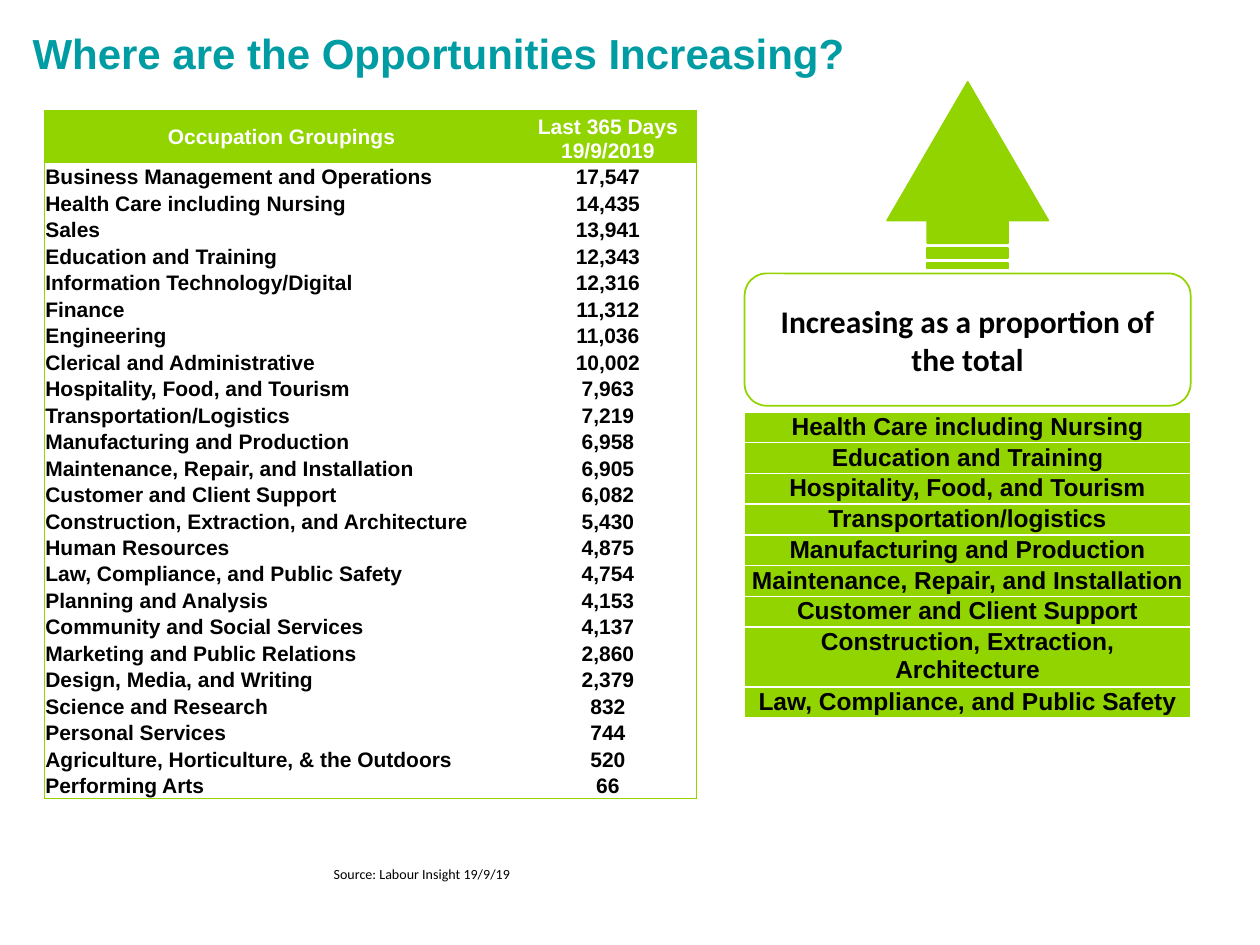
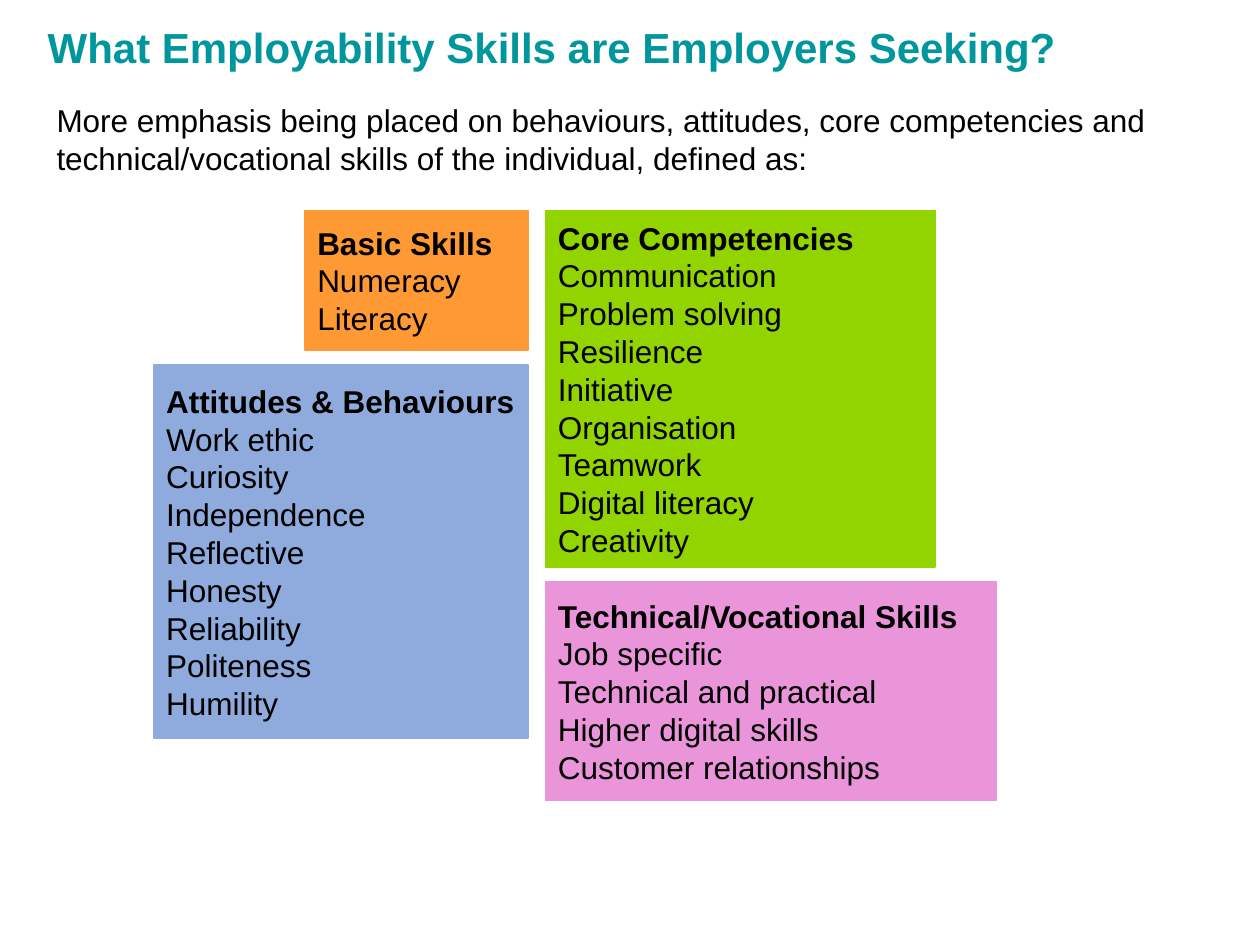
from dataclasses import dataclass

from lxml import etree
from pptx import Presentation
from pptx import util as u
from pptx.dml.color import RGBColor
from pptx.enum import shapes, text
from pptx.oxml.ns import qn

PX = 9144  # EMU per px, 100 px to the inch


@dataclass(frozen=True)
class Theme:
    heading: str = "Arial"
    note: str = "Calibri"
    black: str = "000000"
    white: str = "FFFFFF"
    green: str = "92D400"
    blue: str = "8FAADC"
    orange: str = "FF9933"
    pink: str = "EA95DA"
    opportunities_teal: str = "009CA3"
    skills_teal: str = "00969D"
    title_size: int = 24
    body_size: int = 18
    rising_size: int = 14
    table_size: int = 12
    source_size: int = 8
    leading: float = 1.2


THEME = Theme()


@dataclass(frozen=True)
class Box:
    left: int
    top: int
    width: int
    height: int

    def emu(self) -> tuple:
        return tuple(u.Emu(side * PX) for side in
                     (self.left, self.top, self.width, self.height))


@dataclass(frozen=True)
class SkillGroup:
    heading: str
    skills: tuple
    colour: str
    box: Box


OCCUPATIONS = (
    ("Business Management and Operations", "17,547"),
    ("Health Care including Nursing", "14,435"),
    ("Sales", "13,941"),
    ("Education and Training", "12,343"),
    ("Information Technology/Digital", "12,316"),
    ("Finance", "11,312"),
    ("Engineering", "11,036"),
    ("Clerical and Administrative", "10,002"),
    ("Hospitality, Food, and Tourism", "7,963"),
    ("Transportation/Logistics", "7,219"),
    ("Manufacturing and Production", "6,958"),
    ("Maintenance, Repair, and Installation", "6,905"),
    ("Customer and Client Support", "6,082"),
    ("Construction, Extraction, and Architecture", "5,430"),
    ("Human Resources", "4,875"),
    ("Law, Compliance, and Public Safety", "4,754"),
    ("Planning and Analysis", "4,153"),
    ("Community and Social Services", "4,137"),
    ("Marketing and Public Relations", "2,860"),
    ("Design, Media, and Writing", "2,379"),
    ("Science and Research", "832"),
    ("Personal Services", "744"),
    ("Agriculture, Horticulture, & the Outdoors", "520"),
    ("Performing Arts", "66"),
)

RISING = (
    "Health Care including Nursing",
    "Education and Training",
    "Hospitality, Food, and Tourism",
    "Transportation/logistics",
    "Manufacturing and Production",
    "Maintenance, Repair, and Installation",
    "Customer and Client Support",
    "Construction, Extraction, Architecture",
    "Law, Compliance, and Public Safety",
)
TWO_LINE_RISING = "Construction, Extraction, Architecture"

SKILL_GROUPS = (
    SkillGroup("Attitudes & Behaviours",
               ("Work ethic", "Curiosity", "Independence", "Reflective",
                "Honesty", "Reliability", "Politeness", "Humility"),
               THEME.blue, Box(122, 290, 297, 296)),
    SkillGroup("Core Competencies",
               ("Communication", "Problem solving", "Resilience", "Initiative",
                "Organisation", "Teamwork", "Digital literacy", "Creativity"),
               THEME.green, Box(433, 167, 309, 283)),
    SkillGroup("Basic Skills", ("Numeracy", "Literacy"),
               THEME.orange, Box(242, 167, 177, 111)),
    SkillGroup("Technical/Vocational Skills",
               ("Job specific", "Technical and practical",
                "Higher digital skills", "Customer relationships"),
               THEME.pink, Box(433, 462, 358, 173)),
)


def write(frame, *lines: str, size: int, font: str = THEME.heading,
          colour: str = THEME.black, bold: bool = False, bold_first: bool = False,
          centred: bool = False, leading: float | None = None) -> None:
    """Fill a text frame with one paragraph per line."""
    for index, line in enumerate(lines):
        paragraph = frame.add_paragraph() if index else frame.paragraphs[0]
        paragraph.alignment = text.PP_ALIGN.CENTER if centred else text.PP_ALIGN.LEFT
        if leading:
            paragraph.line_spacing = u.Pt(size * leading)
        run = paragraph.add_run()
        run.text = line
        run.font.name, run.font.size = font, u.Pt(size)
        run.font.bold = bold or (bold_first and index == 0)
        run.font.color.rgb = RGBColor.from_string(colour)


def add_label(slide, box: Box, line: str, **style) -> None:
    frame = slide.shapes.add_textbox(*box.emu()).text_frame
    frame.word_wrap = True
    frame.auto_size = text.MSO_AUTO_SIZE.SHAPE_TO_FIT_TEXT
    write(frame, line, **style)


def add_title(slide, box: Box, line: str, colour: str) -> None:
    add_label(slide, box, line, size=THEME.title_size, colour=colour,
              bold=True, leading=THEME.leading)


def add_block(slide, kind, box: Box, line: str, fill: str | None = None):
    block = slide.shapes.add_shape(kind, *box.emu())
    block.shadow.inherit = False
    if fill:
        block.fill.solid()
        block.fill.fore_color.rgb = RGBColor.from_string(fill)
    else:
        block.fill.background()
    block.line.color.rgb = RGBColor.from_string(line)
    block.line.width = u.Pt(1)
    block.text_frame.word_wrap = True
    block.text_frame.vertical_anchor = text.MSO_ANCHOR.MIDDLE
    return block


def set_borders(cell, sides: str, colour: str, points: float) -> None:
    """Draw the named sides (of L, R, T, B) and clear the others."""
    properties = cell._tc.get_or_add_tcPr()
    for index, side in enumerate("LRTB"):
        border = etree.Element(qn(f"a:ln{side}"), w=str(int(u.Pt(points))))
        if side in sides:
            fill = etree.SubElement(border, qn("a:solidFill"))
            etree.SubElement(fill, qn("a:srgbClr"), val=colour)
        else:
            etree.SubElement(border, qn("a:noFill"))
        properties.insert(index, border)


def add_grid(slide, box: Box, rows: int, widths: tuple, heights: list):
    table = slide.shapes.add_table(rows, len(widths), *box.emu()).table
    table.first_row = table.horz_banding = False
    for column, width in zip(table.columns, widths):
        column.width = u.Emu(width * PX)
    for row, height in zip(table.rows, heights):
        row.height = u.Emu(height)
    return table


def fill_cell(cell, words: str, anchor, fill: str | None, **style) -> None:
    cell.margin_left = cell.margin_right = cell.margin_top = u.Emu(PX)
    cell.margin_bottom = 0
    cell.vertical_anchor = anchor
    if fill:
        cell.fill.solid()
        cell.fill.fore_color.rgb = RGBColor.from_string(fill)
    else:
        cell.fill.background()
    write(cell.text_frame, words, bold=True, **style)


def add_occupations(slide) -> None:
    box, header = Box(35, 88, 518, 542), 41
    rows = (("Occupation Groupings", "Last 365 Days 19/9/2019"), *OCCUPATIONS)
    body = (box.height - header) * PX // len(OCCUPATIONS)
    table = add_grid(slide, box, len(rows), (377, 141),
                     [header * PX] + [body] * len(OCCUPATIONS))
    for r, row in enumerate(rows):
        for c, words in enumerate(row):
            cell, is_header = table.cell(r, c), r == 0
            middle = is_header and c == 0
            fill_cell(cell, words,
                      text.MSO_ANCHOR.MIDDLE if middle else text.MSO_ANCHOR.BOTTOM,
                      THEME.green if is_header else None,
                      size=THEME.table_size, centred=is_header or c == 1,
                      colour=THEME.white if is_header else THEME.black)
            sides = "LR"[c] + "T" * is_header + "B" * (r == len(rows) - 1)
            set_borders(cell, sides, THEME.green, 0.5)


def add_rising(slide) -> None:
    heights = [(47 if name == TWO_LINE_RISING else 24) * PX for name in RISING]
    table = add_grid(slide, Box(591, 327, 354, 239), len(RISING), (354,), heights)
    for r, name in enumerate(RISING):
        cell = table.cell(r, 0)
        fill_cell(cell, name, text.MSO_ANCHOR.TOP, THEME.green,
                  size=THEME.rising_size, centred=True)
        set_borders(cell, "LRTB", THEME.white, 1)


def build_opportunities(slide) -> None:
    add_title(slide, Box(16, 17, 948, 50), "Where are the Opportunities Increasing?",
              THEME.opportunities_teal)
    add_occupations(slide)
    caption = add_block(slide, shapes.MSO_SHAPE.ROUNDED_RECTANGLE,
                        Box(591, 217, 354, 105), THEME.green)
    write(caption.text_frame, "Increasing as a proportion of the total",
          size=THEME.body_size, font=THEME.note, bold=True, centred=True)
    add_rising(slide)
    arrow = add_block(slide, shapes.MSO_SHAPE.STRIPED_RIGHT_ARROW,
                      Box(694, 75, 148, 128), THEME.green, THEME.green)
    arrow.rotation = 270
    arrow.adjustments[0], arrow.adjustments[1] = 0.5, 0.86
    add_label(slide, Box(255, 682, 163, 37), "Source: Labour Insight 19/9/19",
              size=THEME.source_size, font=THEME.note)


def build_skills(slide) -> None:
    add_title(slide, Box(28, 12, 951, 50),
              "What Employability Skills are Employers Seeking?", THEME.skills_teal)
    add_label(slide, Box(35, 75, 951, 71),
              "More emphasis being placed on behaviours, attitudes, core competencies "
              "and technical/vocational skills of the individual, defined as:",
              size=THEME.body_size, leading=THEME.leading)
    for group in SKILL_GROUPS:
        block = add_block(slide, shapes.MSO_SHAPE.RECTANGLE, group.box,
                          group.colour, group.colour)
        write(block.text_frame, group.heading, *group.skills, size=THEME.body_size,
              bold_first=True, leading=THEME.leading)


def main() -> None:
    deck = Presentation()
    deck.slide_width, deck.slide_height = u.Emu(1000 * PX), u.Emu(750 * PX)
    blank = deck.slide_layouts[6]
    for build in (build_opportunities, build_skills):
        build(deck.slides.add_slide(blank))
    deck.save("out.pptx")


if __name__ == "__main__":
    main()
